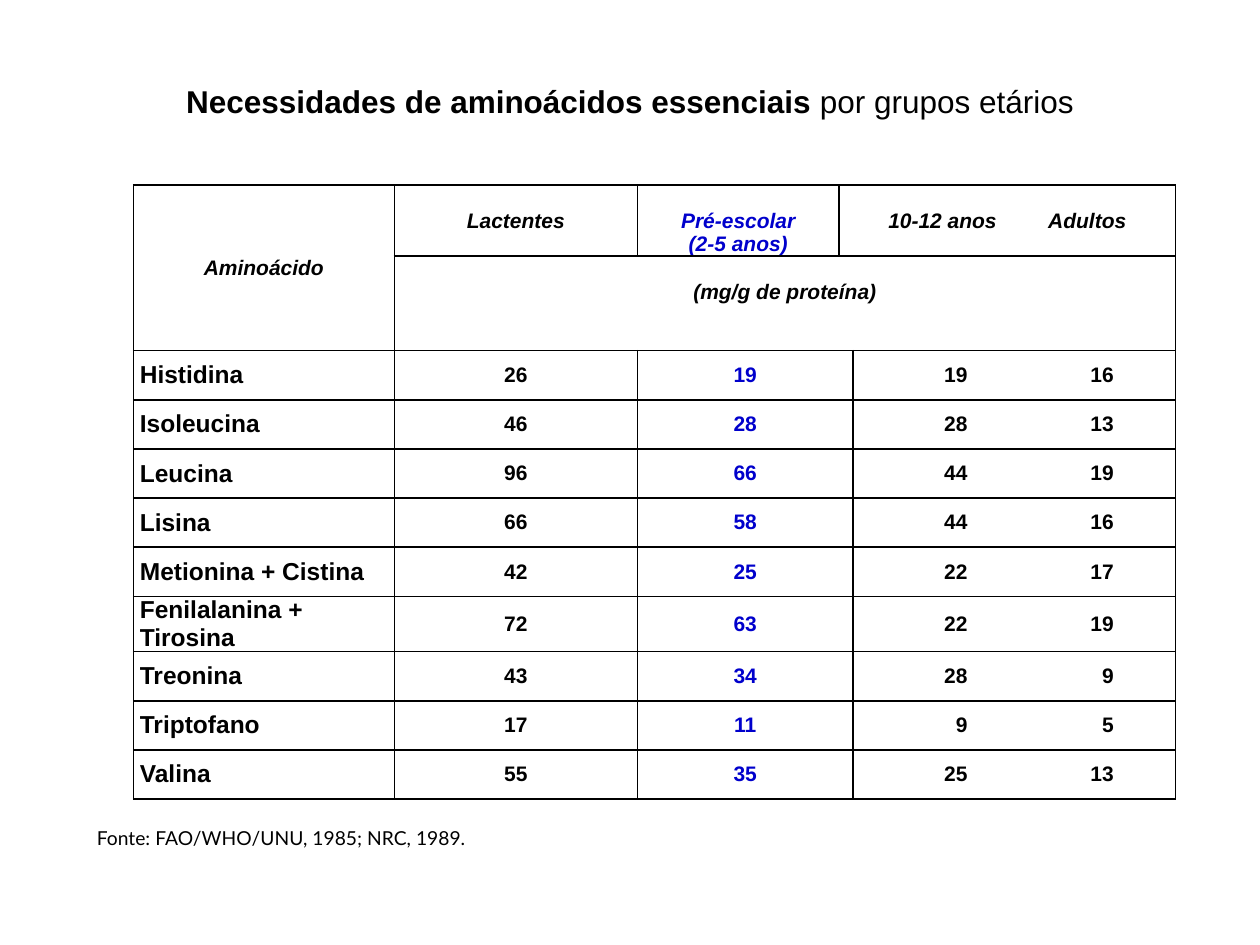
from lxml import etree
from pptx import Presentation
from pptx.dml.color import RGBColor
from pptx.enum import text
from pptx.oxml import ns
from pptx.util import Inches, Pt

BLACK, BLUE, WHITE = "000000", "0000CC", "FFFFFF"
TITLE = [("Necessidades de aminoácidos essenciais ", True),
         ("por grupos etários", False)]
SOURCE = "Fonte: FAO/WHO/UNU, 1985; NRC, 1989."
UNIT = "(mg/g de proteína)"
# amino acid, infants, preschool, 10-12 years, adults
NEEDS = [
    ("Histidina", 26, 19, 19, 16),
    ("Isoleucina", 46, 28, 28, 13),
    ("Leucina", 96, 66, 44, 19),
    ("Lisina", 66, 58, 44, 16),
    ("Metionina + Cistina", 42, 25, 22, 17),
    ("Fenilalanina + Tirosina", 72, 63, 22, 19),
    ("Treonina", 43, 34, 28, 9),
    ("Triptofano", 17, 11, 9, 5),
    ("Valina", 55, 35, 25, 13),
]
COL_WIDTHS = [2.07, 1.93, 1.6, 0.11, 2.56]
HEADER_HEIGHTS = [0.56, 0.75]
ROW_HEIGHT, TALL_ROW_HEIGHT = 0.39, 0.44
LEFT, CENTER = text.PP_ALIGN.LEFT, text.PP_ALIGN.CENTER
TOP, MIDDLE = text.MSO_ANCHOR.TOP, text.MSO_ANCHOR.MIDDLE


def rgb(color):
    return RGBColor.from_string(color)


def add_run(p, words, size, color=BLACK, font="Arial", bold=False, italic=False):
    r = p.add_run()
    r.text = words
    f = r.font
    f.name, f.size, f.bold, f.italic = font, Pt(size), bold, italic
    f.color.rgb = rgb(color)


def add_tabs(p, stops, align):
    tabs = etree.SubElement(p._p.get_or_add_pPr(), ns.qn("a:tabLst"))
    for stop in stops:
        etree.SubElement(tabs, ns.qn("a:tab"), pos=str(Inches(stop)), algn=align)


def style_cell(cell):
    """Give a cell thin black borders, a white fill and narrow margins."""
    tc_pr = cell._tc.get_or_add_tcPr()
    for side in ("lnL", "lnR", "lnT", "lnB"):
        ln = etree.SubElement(tc_pr, ns.qn("a:" + side), w=str(Pt(1)))
        fill = etree.SubElement(ln, ns.qn("a:solidFill"))
        etree.SubElement(fill, ns.qn("a:srgbClr"), val=BLACK)
    cell.fill.solid()
    cell.fill.fore_color.rgb = rgb(WHITE)
    cell.margin_left = cell.margin_right = Inches(0.05)
    cell.margin_top = cell.margin_bottom = 0


def write_cell(cell, lines, size=12, color=BLACK, italic=False, align=CENTER,
               anchor=MIDDLE, top=0, stops=(), tab_align="l"):
    cell.vertical_anchor = anchor
    cell.margin_top = Inches(top)
    tf = cell.text_frame
    for i, line in enumerate(lines.split("\n")):
        p = tf.add_paragraph() if i else tf.paragraphs[0]
        p.alignment = align
        if stops:
            add_tabs(p, stops, tab_align)
        add_run(p, line, size, color, bold=True, italic=italic)


def fill_header(table):
    for first, last in [((0, 0), (1, 0)), ((0, 3), (0, 4)), ((1, 1), (1, 4))]:
        table.cell(*first).merge(table.cell(*last))
    write_cell(table.cell(0, 0), "Aminoácido", italic=True)
    below = dict(italic=True, anchor=TOP, top=0.19)
    write_cell(table.cell(0, 1), "Lactentes", **below)
    write_cell(table.cell(0, 2), "Pré-escolar\n(2-5 anos)", color=BLUE, **below)
    write_cell(table.cell(0, 3), "\t10-12 anos\tAdultos", align=LEFT,
               stops=(0.34, 1.61), **below)
    write_cell(table.cell(1, 1), UNIT, **below)


def fill_body(table):
    for i, (name, infant, preschool, child, adult) in enumerate(NEEDS, 2):
        table.cell(i, 2).merge(table.cell(i, 3))
        write_cell(table.cell(i, 0), name, size=14, align=LEFT)
        write_cell(table.cell(i, 1), str(infant))
        write_cell(table.cell(i, 2), str(preschool), color=BLUE)
        write_cell(table.cell(i, 4), f"\t{child}\t{adult}", align=LEFT,
                   stops=(0.86, 2.02), tab_align="r")


def main():
    prs = Presentation()
    prs.slide_width, prs.slide_height = Inches(10), Inches(7.5)
    s = prs.slides.add_slide(prs.slide_layouts[5])

    title = s.shapes.title
    title.left, title.top = Inches(0.67), Inches(0.6)
    title.width, title.height = Inches(8.66), Inches(0.4)
    tf = title.text_frame
    tf.vertical_anchor = MIDDLE
    p = tf.paragraphs[0]
    p.alignment = CENTER
    for words, bold in TITLE:
        add_run(p, words, 18, bold=bold)

    heights = HEADER_HEIGHTS + [
        TALL_ROW_HEIGHT if len(row[0]) > 20 else ROW_HEIGHT for row in NEEDS]
    table = s.shapes.add_table(
        len(heights), len(COL_WIDTHS), Inches(1.06), Inches(1.47),
        Inches(sum(COL_WIDTHS)), Inches(sum(heights))).table
    for col, width in zip(table.columns, COL_WIDTHS):
        col.width = Inches(width)
    for row, height in zip(table.rows, heights):
        row.height = Inches(height)
    for cell in table.iter_cells():
        style_cell(cell)
    fill_header(table)
    fill_body(table)

    box = s.shapes.add_textbox(Inches(0.67), Inches(6.51), Inches(4.56), Inches(0.29))
    box.text_frame.word_wrap = True
    add_run(box.text_frame.paragraphs[0], SOURCE, 11, font="Lato")

    prs.save("out.pptx")


if __name__ == "__main__":
    main()
